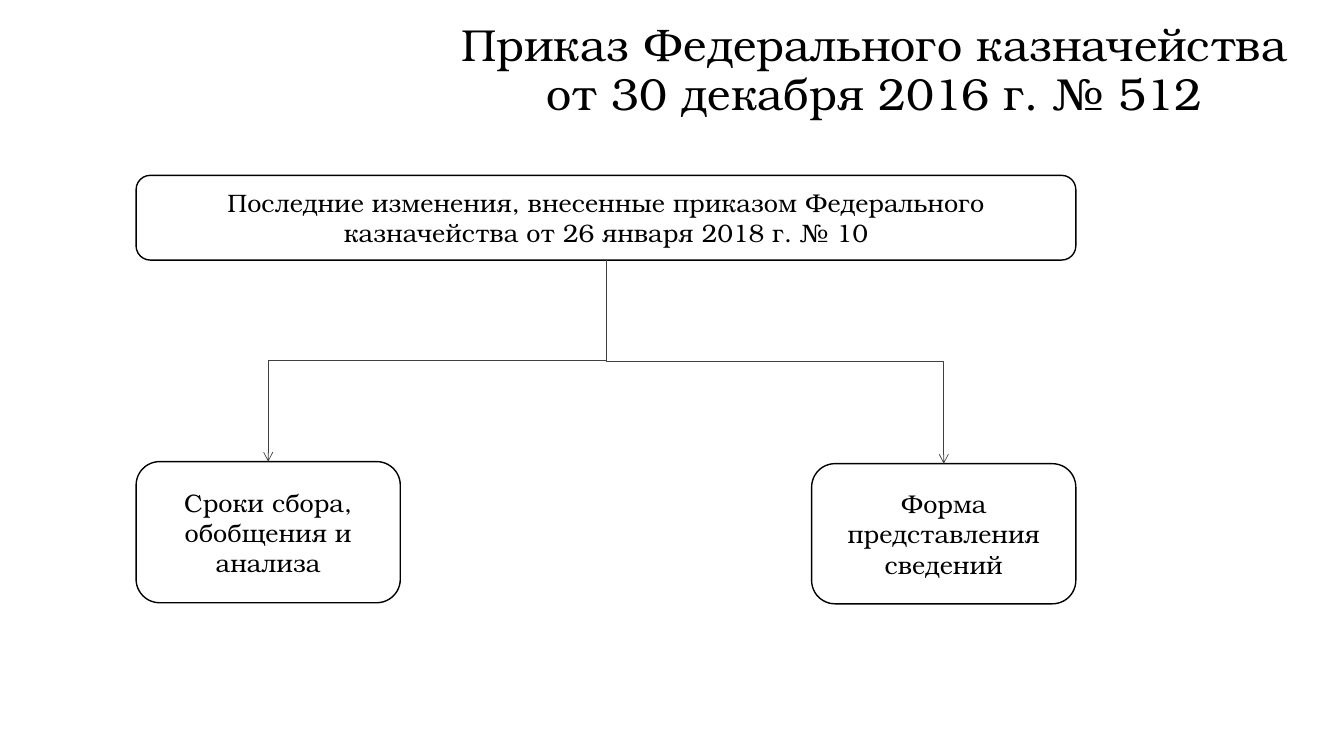
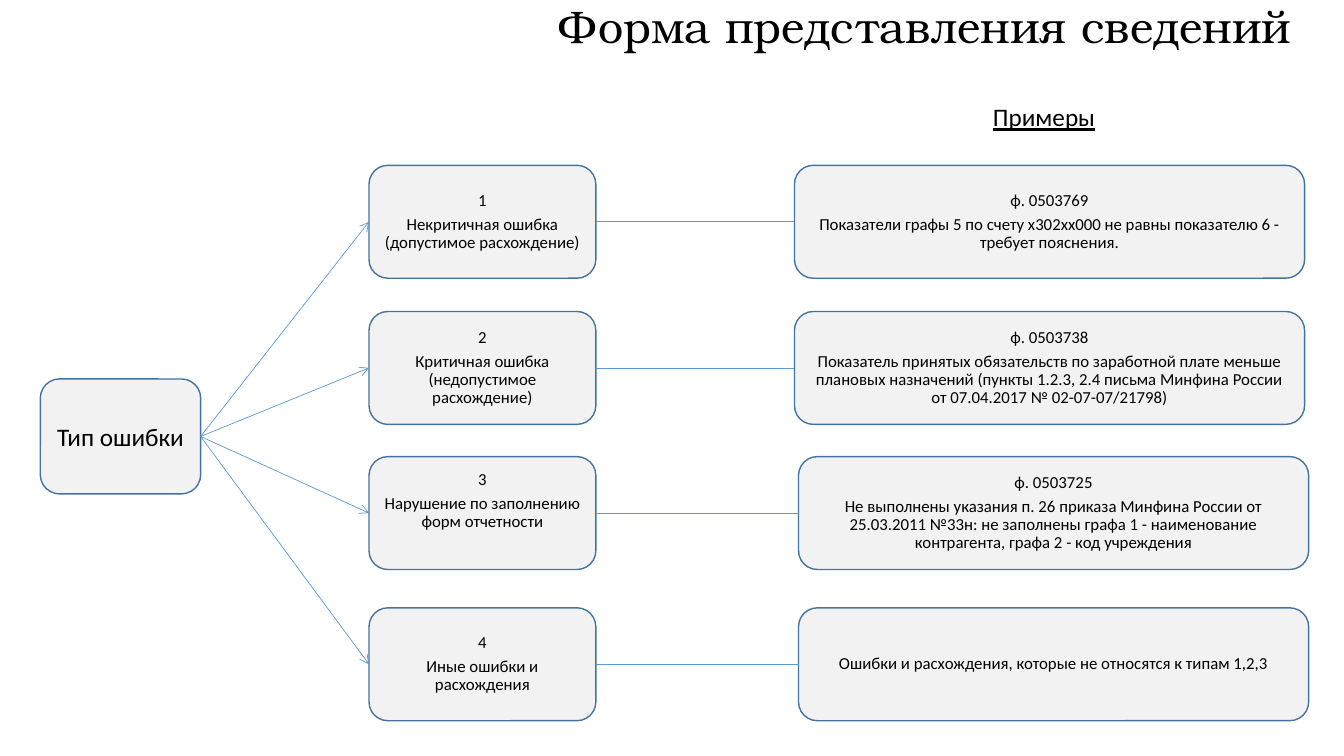
from dataclasses import dataclass

from lxml import etree
from pptx import Presentation
from pptx.dml.color import RGBColor
from pptx.enum.shapes import MSO_CONNECTOR, MSO_SHAPE
from pptx.enum.text import MSO_ANCHOR, PP_ALIGN
from pptx.oxml.ns import qn
from pptx.util import Inches, Pt

ROUND = MSO_SHAPE.ROUNDED_RECTANGLE
STRAIGHT, ELBOW = MSO_CONNECTOR.STRAIGHT, MSO_CONNECTOR.ELBOW
CENTER = PP_ALIGN.CENTER
MIDDLE, TOP_EDGE = MSO_ANCHOR.MIDDLE, MSO_ANCHOR.TOP
TOP, LEFT, BOTTOM, RIGHT = range(4)

BLACK, WHITE, GREY, PALE = "000000", "FFFFFF", "404040", "F2F2F2"
NAVY, BLUE = "43739E", "5B9BD5"
SERIF, SANS = "TeX Gyre Bonum", "Calibri"


@dataclass(frozen=True)
class Style:
    """Look of a text: font values and paragraph values."""
    font: dict
    para: dict


@dataclass(frozen=True)
class Look:
    """Look of a box: fill, outline and text."""
    fill: str
    line: str
    text: Style


@dataclass(frozen=True)
class Row:
    """One error type with its example."""
    top: float
    kind: tuple
    left: float
    case: tuple
    foot: float = 0.05


PLAIN = {"alignment": CENTER}
TIGHT = PLAIN | {"line_spacing": 0.9}
TITLE = Style({"name": SERIF, "size": Pt(32)}, TIGHT)
ORDER = Look(WHITE, BLACK, Style({"name": SERIF, "size": Pt(18)}, PLAIN))
LARGE = Look(PALE, NAVY, Style({"name": SANS, "size": Pt(18)}, PLAIN))
SMALL = Look(PALE, NAVY, Style({"name": SANS, "size": Pt(12)},
                               TIGHT | {"space_after": Pt(4.2)}))
HEAD = Style(LARGE.text.font | {"underline": True}, PLAIN)

ROWS = (
    Row(1.64, ("1", "Некритичная ошибка (допустимое расхождение)"),
        7.88, ("ф. 0503769", "Показатели графы 5 по счету x302xx000 не равны "
               "показателю 6 - требует пояснения.")),
    Row(3.09, ("2", "Критичная ошибка (недопустимое расхождение)"),
        7.88, ("ф. 0503738", "Показатель принятых обязательств по заработной "
               "плате меньше плановых назначений (пункты 1.2.3, 2.4 письма "
               "Минфина России от 07.04.2017 № 02-07-07/21798)")),
    Row(4.53, ("3", "Нарушение по заполнению форм отчетности"),
        7.92, ("ф. 0503725", "Не выполнены указания п. 26 приказа Минфина "
               "России от 25.03.2011 №33н: не заполнены графа 1 - "
               "наименование контрагента, графа 2 - код учреждения"), 0.29),
    Row(6.03, ("4", "Иные ошибки и расхождения"),
        7.92, ("Ошибки и расхождения, которые не относятся к типам 1,2,3",)),
)


def color(code: str) -> RGBColor:
    return RGBColor.from_string(code)


def apply(target, values: dict) -> None:
    for name, value in values.items():
        setattr(target, name, value)


def write(shape, texts: tuple, style: Style, anchor=MIDDLE) -> None:
    frame = shape.text_frame
    apply(frame, {"word_wrap": True, "vertical_anchor": anchor})
    for i, text in enumerate(texts):
        para = frame.add_paragraph() if i else frame.paragraphs[0]
        apply(para, style.para)
        run = para.add_run()
        run.text = text
        apply(run.font, style.font)
        run.font.color.rgb = color(BLACK)


def add_text(slide, area: tuple, text: str, style: Style, anchor=MIDDLE) -> None:
    box = slide.shapes.add_textbox(*map(Inches, area))
    write(box, (text,), style, anchor)


def add_box(slide, area: tuple, texts: tuple, look: Look):
    box = slide.shapes.add_shape(ROUND, *map(Inches, area))
    box.shadow.inherit = False
    box.fill.solid()
    box.fill.fore_color.rgb = color(look.fill)
    box.line.color.rgb = color(look.line)
    box.line.width = Pt(1)
    write(box, texts, look.text)
    return box


def join(slide, start, out: int, end, into: int, tone: str,
         kind=STRAIGHT, arrow: bool = True):
    """Draw a connector between the given sides of two boxes."""
    link = slide.shapes.add_connector(kind, 0, 0, 0, 0)
    link.begin_connect(start, out)
    link.end_connect(end, into)
    link.line.color.rgb = color(tone)
    link.line.width = Pt(0.5)
    if arrow:
        line = link.line._get_or_add_ln()
        etree.SubElement(line, qn("a:tailEnd"), type="arrow")
    etree.SubElement(link._element.spPr, qn("a:effectLst"))
    return link


def branch(slide, start, end) -> None:
    """Draw an elbow that leaves downwards and enters from above."""
    link = join(slide, start, BOTTOM, end, TOP, GREY, ELBOW)
    mid_x, mid_y = link.left + link.width // 2, link.top + link.height // 2
    wide, high = link.height, link.width
    right = link.end_x > link.begin_x
    apply(link, {"left": mid_x - wide // 2, "top": mid_y - high // 2,
                 "width": wide, "height": high})
    frame = link._element.spPr.find(qn("a:xfrm"))
    turn = {"rot": str((270 if right else 90) * 60000),
            "flipH": str(int(right)), "flipV": "0"}
    for name, value in turn.items():
        frame.set(name, value)


def draw_order(slide) -> None:
    add_text(slide, (4.34, 0, 8.67, 1.42),
             "Приказ Федерального казначейства от 30 декабря 2016 г. № 512",
             TITLE)
    root = add_box(slide, (1.35, 1.74, 9.32, 0.84),
                   ("Последние изменения, внесенные приказом Федерального "
                    "казначейства от 26 января 2018 г. № 10",), ORDER)
    parts = (((1.35, 4.58, 2.62, 1.4), "Сроки сбора, обобщения и анализа"),
             ((8.05, 4.6, 2.62, 1.39), "Форма представления сведений"))
    for area, text in parts:
        branch(slide, root, add_box(slide, area, (text,), ORDER))


def draw_form(slide) -> None:
    add_text(slide, (5.02, 0, 8.31, 0.58), "Форма представления сведений", TITLE)
    add_text(slide, (8.41, 0.96, 3.89, 0.4), "Примеры", HEAD, TOP_EDGE)
    root = add_box(slide, (0.4, 3.76, 1.59, 1.14), ("Тип ошибки",), LARGE)
    for row in ROWS:
        kind = add_box(slide, (3.66, row.top, 2.25, 1.12), row.kind, SMALL)
        kind.text_frame.margin_bottom = Inches(row.foot)
        case = add_box(slide, (row.left, row.top, 5.06, 1.12), row.case, SMALL)
        join(slide, root, RIGHT, kind, LEFT, BLUE)
        join(slide, kind, RIGHT, case, LEFT, BLUE, arrow=False)


def main() -> None:
    deck = Presentation()
    deck.slide_width, deck.slide_height = Inches(13.33), Inches(7.5)
    for draw in (draw_order, draw_form):
        draw(deck.slides.add_slide(deck.slide_layouts[6]))
    deck.save("out.pptx")


if __name__ == "__main__":
    main()
